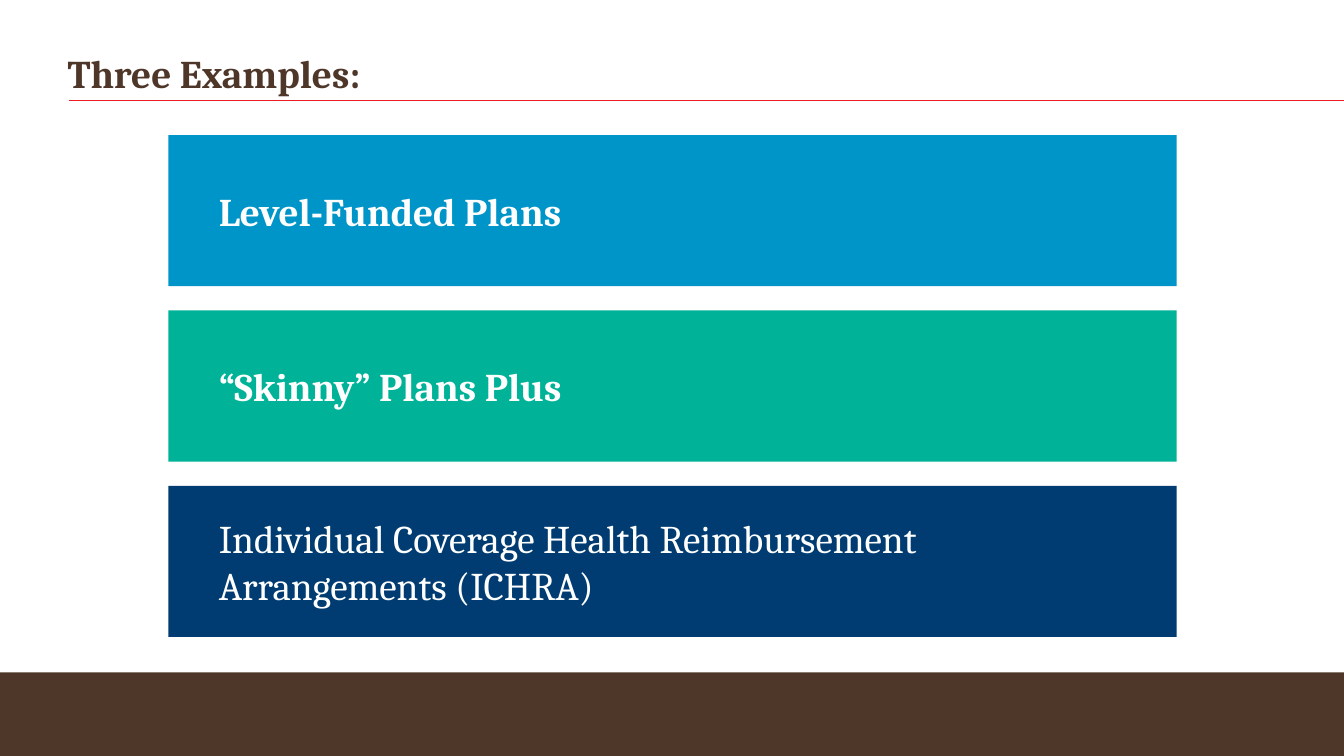
import pptx
import pptx.dml.color
import pptx.enum.shapes
import pptx.enum.text
import pptx.oxml.ns
import pptx.util
from lxml import etree

Inches = pptx.util.Inches
Pt = pptx.util.Pt
MSO_ANCHOR = pptx.enum.text.MSO_ANCHOR

BROWN, RED, WHITE = "4E3629", "ED1C24", "FFFFFF"
EXAMPLES = [
    ("Level-Funded Plans", "0095C8", True),
    ("“Skinny” Plans Plus", "00B398", True),
    ("Individual Coverage Health Reimbursement Arrangements (ICHRA)", "003C71", False),
]
BAND_TOP, BAND_HEIGHT, BAND_STEP = 1.34, 1.5, 1.74


def rgb(value):
    return pptx.dml.color.RGBColor.from_string(value)


def set_text(s, text, color, bold, anchor, side=0, edge=0, spacing=1.0):
    """Write one left-aligned paragraph; side and edge are margins in inches."""
    tf = s.text_frame
    frame = {
        "word_wrap": True,
        "auto_size": pptx.enum.text.MSO_AUTO_SIZE.NONE,
        "vertical_anchor": anchor,
        "margin_left": Inches(side),
        "margin_right": Inches(side),
        "margin_top": Inches(edge),
        "margin_bottom": Inches(edge),
    }
    for name, value in frame.items():
        setattr(tf, name, value)
    p = tf.paragraphs[0]
    p.alignment = pptx.enum.text.PP_ALIGN.LEFT
    p.line_spacing = spacing
    r = p.add_run()
    r.text = text
    for name, value in {"name": "Cambria", "size": Pt(28), "bold": bold}.items():
        setattr(r.font, name, value)
    r.font.color.rgb = rgb(color)


def add_bar(slide, left, top, width, height, color):
    s = slide.shapes.add_shape(
        pptx.enum.shapes.MSO_SHAPE.RECTANGLE,
        Inches(left), Inches(top), Inches(width), Inches(height))
    s.shadow.inherit = False
    s.fill.solid()
    s.fill.fore_color.rgb = rgb(color)
    s.line.fill.background()
    return s


def add_rule(slide, left, right, y):
    c = slide.shapes.add_connector(
        pptx.enum.shapes.MSO_CONNECTOR.STRAIGHT,
        Inches(left), Inches(y), Inches(right), Inches(y))
    c.line.color.rgb = rgb(RED)
    c.line.width = Pt(1)
    etree.SubElement(c._element.spPr, pptx.oxml.ns.qn("a:effectLst"))


def set_title(slide, text):
    s = slide.shapes.title
    box = {"left": 0.67, "top": 0, "width": 12, "height": 0.96}
    for name, value in box.items():
        setattr(s, name, Inches(value))
    set_text(s, text, BROWN, True, MSO_ANCHOR.BOTTOM, spacing=0.9)


def main():
    prs = pptx.Presentation()
    prs.slide_width, prs.slide_height = Inches(13.33), Inches(7.5)
    slide = prs.slides.add_slide(prs.slide_layouts[5])
    add_bar(slide, -0.18, 6.67, 13.59, 0.88, BROWN)
    add_rule(slide, 0.68, 13.33, 1)
    set_title(slide, "Three Examples:")
    for i, (text, color, bold) in enumerate(EXAMPLES):
        s = add_bar(slide, 1.67, BAND_TOP + i * BAND_STEP, 10, BAND_HEIGHT, color)
        set_text(s, text, WHITE, bold, MSO_ANCHOR.MIDDLE, side=0.5, edge=0.05)
    prs.save("out.pptx")


if __name__ == "__main__":
    main()
